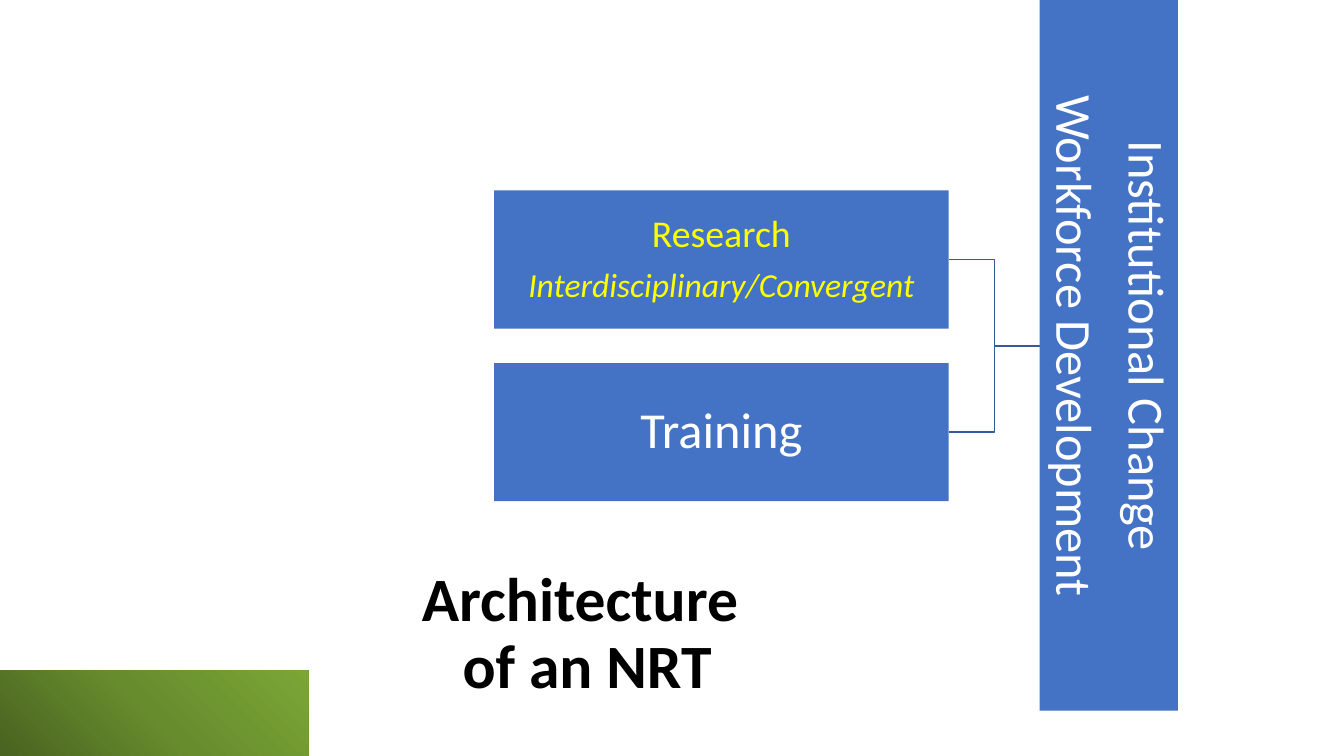
from copy import deepcopy

from pptx import Presentation
from pptx.dml.color import RGBColor
from pptx.enum.shapes import MSO_SHAPE
from pptx.enum.text import MSO_ANCHOR, PP_ALIGN
from pptx.oxml.ns import qn
from pptx.util import Inches, Pt

RECTANGLE = MSO_SHAPE.RECTANGLE
MIDDLE, TOP = MSO_ANCHOR.MIDDLE, MSO_ANCHOR.TOP
CENTER = PP_ALIGN.CENTER

BLUE = RGBColor(0x44, 0x72, 0xC4)
LINE_BLUE = RGBColor(0x36, 0x5B, 0x9D)
WHITE = RGBColor(0xFF, 0xFF, 0xFF)
YELLOW = RGBColor(0xFF, 0xFF, 0x00)
BLACK = RGBColor(0x00, 0x00, 0x00)
GREENS = [RGBColor(0x49, 0x63, 0x20), RGBColor(0x67, 0x8C, 0x2D), RGBColor(0x7B, 0xA6, 0x36)]

FONT = "Calibri"
WIDTH, HEIGHT = 13.33, 7.5
BOX_LEFT, BOX_TOP = 4.9, 1.89
BOX_WIDTH, BOX_HEIGHT = 4.51, 1.37
ROW_PITCH = 1.25 * BOX_HEIGHT
COLUMN_GAP = 0.2 * BOX_WIDTH
BAR_LENGTH = 7.24


def write_lines(text_frame, lines, space_share=0.0):
    """Write centred lines given as (text, size, colour, bold, italic)."""
    for index, (text, size, color, bold, italic) in enumerate(lines):
        paragraph = text_frame.paragraphs[0] if index == 0 else text_frame.add_paragraph()
        paragraph.alignment = CENTER
        paragraph.line_spacing = 0.9
        paragraph.space_before = Pt(0)
        paragraph.space_after = Pt(space_share * size)
        run = paragraph.add_run()
        run.text = text
        run.font.name = FONT
        run.font.size = Pt(size)
        run.font.bold = bold
        run.font.italic = italic
        run.font.color.rgb = color


def add_rectangle(slide, left, top, width, height):
    """Add a rectangle without outline or shadow."""
    shape = slide.shapes.add_shape(
        RECTANGLE, Inches(left), Inches(top), Inches(width), Inches(height))
    shape.shadow.inherit = False
    shape.line.fill.background()
    return shape


def add_node(slide, left, top, width, height, lines, rotation=0):
    """Add a blue box of the hierarchy with its text."""
    node = add_rectangle(slide, left, top, width, height)
    node.rotation = rotation
    node.fill.solid()
    node.fill.fore_color.rgb = BLUE
    frame = node.text_frame
    frame.word_wrap = True
    frame.vertical_anchor = MIDDLE
    frame.margin_left = frame.margin_right = Inches(0.03)
    frame.margin_top = frame.margin_bottom = Inches(0.03)
    write_lines(frame, lines, space_share=0.35)


def add_branch(slide, start_x, start_y, end_x, end_y):
    """Add an elbow line that turns halfway between its ends."""
    middle_x = (start_x + end_x) / 2
    builder = slide.shapes.build_freeform(Inches(start_x), Inches(start_y))
    points = [(middle_x, start_y), (middle_x, end_y), (end_x, end_y)]
    builder.add_line_segments([(Inches(x), Inches(y)) for x, y in points], close=False)
    branch = builder.convert_to_shape()
    branch.shadow.inherit = False
    branch.fill.background()
    branch.line.color.rgb = LINE_BLUE
    branch.line.width = Pt(1)


def add_corner_band(slide):
    """Add the green gradient band in the lower left corner."""
    band_height = 0.85
    band = add_rectangle(slide, 0, HEIGHT - band_height, 3.06, band_height)
    band.fill.gradient()
    band.fill.gradient_angle = 45
    stop_list = band._element.spPr.find(qn("a:gradFill")).find(qn("a:gsLst"))
    stop_list.append(deepcopy(stop_list[0]))
    for index, (stop, color) in enumerate(zip(band.fill.gradient_stops, GREENS)):
        stop.position = index / 2
        stop.color.rgb = color


def format_title(slide):
    """Place and write the title."""
    title = slide.shapes.title
    title.left, title.top = Inches(3.36), Inches(5.59)
    title.width, title.height = Inches(4.93), Inches(0.8)
    title.text_frame.word_wrap = True
    title.text_frame.vertical_anchor = TOP
    write_lines(title.text_frame, [
        ("Architecture ", 44, BLACK, True, False),
        ("of an NRT", 44, BLACK, True, False)])


def main():
    """Build the slide and save it."""
    presentation = Presentation()
    presentation.slide_width, presentation.slide_height = Inches(WIDTH), Inches(HEIGHT)
    slide = presentation.slides.add_slide(presentation.slide_layouts[5])
    add_corner_band(slide)

    boxes = [
        [("Research", 27, YELLOW, False, False),
         ("Interdisciplinary/Convergent", 24, YELLOW, False, True)],
        [("Training", 36, WHITE, False, False)],
    ]
    box_right = BOX_LEFT + BOX_WIDTH
    bar_left = box_right + COLUMN_GAP
    bar_middle = BOX_TOP + (ROW_PITCH + BOX_HEIGHT) / 2
    for row, lines in enumerate(boxes):
        top = BOX_TOP + row * ROW_PITCH
        add_branch(slide, bar_left, bar_middle, box_right, top + BOX_HEIGHT / 2)
        add_node(slide, BOX_LEFT, top, BOX_WIDTH, BOX_HEIGHT, lines)

    add_node(
        slide, bar_left + (BOX_HEIGHT - BAR_LENGTH) / 2, bar_middle - BOX_HEIGHT / 2,
        BAR_LENGTH, BOX_HEIGHT,
        [("Institutional Change", 36, WHITE, False, False),
         ("Workforce Development", 36, WHITE, False, False)],
        rotation=90)
    format_title(slide)
    presentation.save("out.pptx")


if __name__ == "__main__":
    main()
